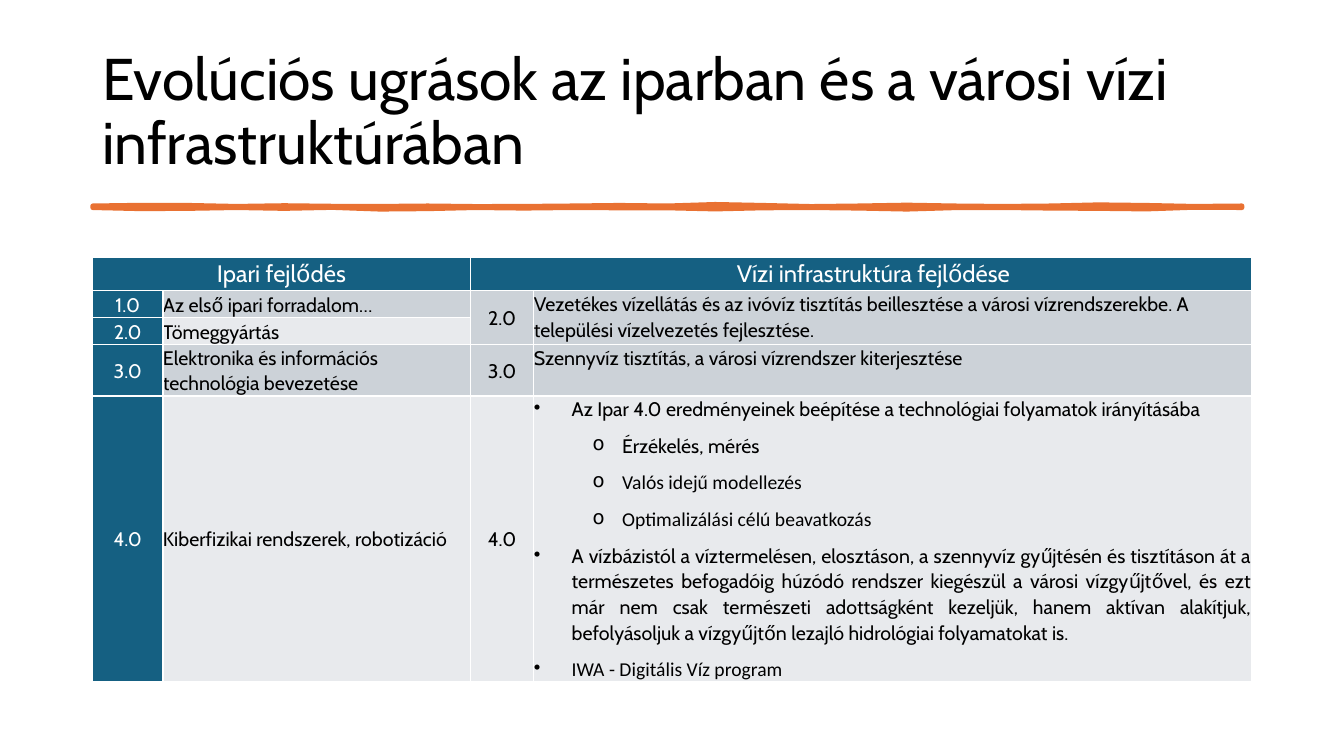
from dataclasses import dataclass

from lxml.etree import SubElement
from pptx import Presentation
from pptx.dml.color import RGBColor
from pptx.enum.text import MSO_ANCHOR, PP_ALIGN
from pptx.oxml.ns import qn
from pptx.util import Pt


@dataclass(frozen=True)
class Theme:
    heading_font: str = "Cabin"
    body_font: str = "Calibri"
    title_size: float = 42
    header_size: float = 17
    body_size: float = 14
    black: str = "000000"
    white: str = "FFFFFF"
    orange: str = "E97132"
    blue: str = "156082"
    dark_band: str = "CCD2D8"
    light_band: str = "E8EAED"


@dataclass
class Line:
    """One paragraph of a table cell."""
    text: str
    align: PP_ALIGN = PP_ALIGN.LEFT
    bullet: str = ""
    margin: float = 0
    indent: float = 0
    font: str = Theme.heading_font


class SlideBuilder:
    def __init__(self, page, theme):
        self.page = page
        self.theme = theme

    def style_runs(self, paragraph, font, size, color):
        for span in paragraph.runs:
            span.font.name = font
            span.font.size = Pt(size)
            span.font.color.rgb = RGBColor.from_string(color)

    def title(self, text, left, top, width, height):
        box = self.page.shapes.add_textbox(Pt(left), Pt(top), Pt(width), Pt(height))
        frame = box.text_frame
        frame.word_wrap = True
        frame.vertical_anchor = MSO_ANCHOR.MIDDLE
        frame.text = text
        para = frame.paragraphs[0]
        para.line_spacing = 0.9
        self.style_runs(para, self.theme.heading_font, self.theme.title_size, self.theme.black)

    def brush_stroke(self, left, top, width, upper, lower):
        """Draw a hand-drawn rule from evenly spaced offsets of its two edges."""
        step = width / (len(upper) - 1)
        upper_edge = [(left + i * step, top + y) for i, y in enumerate(upper)]
        lower_edge = [(left + i * step, top + y) for i, y in enumerate(lower)]
        outline = [(Pt(x), Pt(y)) for x, y in upper_edge + lower_edge[::-1]]
        builder = self.page.shapes.build_freeform(*outline[0])
        builder.add_line_segments(outline[1:], close=True)
        stroke = builder.convert_to_shape()
        stroke.shadow.inherit = False
        color = RGBColor.from_string(self.theme.orange)
        stroke.fill.solid()
        stroke.fill.fore_color.rgb = color
        stroke.line.color.rgb = color
        stroke.line.width = Pt(3.25)

    def table(self, left, top, columns, rows):
        frame = self.page.shapes.add_table(len(rows), len(columns), Pt(left), Pt(top),
                                           Pt(sum(columns)), Pt(sum(rows)))
        table = frame.table
        table.first_row = table.horz_banding = False
        for column, width in zip(table.columns, columns):
            column.width = Pt(width)
        for row, height in zip(table.rows, rows):
            row.height = Pt(height)
        return table

    def cell(self, cell, lines, fill, color, size, anchor):
        cell.margin_left = cell.margin_right = cell.margin_top = cell.margin_bottom = 0
        cell.vertical_anchor = anchor
        self.cell_borders(cell)
        cell.fill.solid()
        cell.fill.fore_color.rgb = RGBColor.from_string(fill)
        frame = cell.text_frame
        frame.text = "\n".join(line.text for line in lines)
        for para, line in zip(frame.paragraphs, lines):
            para.alignment = line.align
            para.line_spacing = 1.07
            para.space_after = Pt(8)
            properties = para._p.get_or_add_pPr()
            properties.set("marL", str(Pt(line.margin)))
            properties.set("indent", str(Pt(line.indent)))
            if line.bullet:
                SubElement(properties, qn("a:buChar")).set("char", line.bullet)
            para.font.size = Pt(size)
            self.style_runs(para, line.font, size, color)
            # The paragraph end sets the size of the bullet
            SubElement(para._p, qn("a:endParaRPr"), sz=str(size * 100))

    def cell_borders(self, cell):
        properties = cell._tc.get_or_add_tcPr()
        for side in ("a:lnL", "a:lnR", "a:lnT", "a:lnB"):
            border = SubElement(properties, qn(side), w=str(Pt(1)))
            fill = SubElement(border, qn("a:solidFill"))
            SubElement(fill, qn("a:srgbClr"), val=self.theme.white)


def centred(text, margin=0):
    return [Line(text, PP_ALIGN.CENTER, margin=margin)]


def bullet(text, align=PP_ALIGN.LEFT, font=Theme.heading_font):
    return Line(text, align, "•", 27, -27, font)


def sub_bullet(text, font=Theme.heading_font):
    return Line(text, PP_ALIGN.LEFT, "o", 63, -21, font)


def main():
    theme = Theme()
    deck = Presentation()
    deck.slide_width, deck.slide_height = Pt(960), Pt(540)
    builder = SlideBuilder(deck.slides.add_slide(deck.slide_layouts[6]), theme)

    # Title and the brush stroke under it
    builder.title("Evolúciós ugrások az iparban és a városi vízi infrastruktúrában",
                  66, 28.75, 828, 104.4)
    upper = [0, -0.5, -0.4, 0.3, -0.2, 0.2, 0.3, 0, 0.4, 0.3, 0, -0.4, 0,
             -1.1, -0.4, 0.4, 0, -0.6, 0, 0.3, 0, -0.8, -0.4, 0.3, 0]
    lower = [1.4, 2.2, 2, 1.4, 2, 1.3, 2.5, 2.2, 1.4, 1.8, 1.4, 1.6, 1.6,
             2.4, 1.6, 1.4, 1.8, 2.5, 1.5, 1.4, 1.8, 2, 2.4, 1.2, 1.4]
    builder.brush_stroke(66.2, 147, 821, upper, lower)

    # Table grid with its merged cells
    table = builder.table(66.2, 184, [50.2, 219.6, 45.4, 512.6],
                          [23.8, 19.2, 19.2, 36.7, 204])
    for first, last in [((0, 0), (0, 1)), ((0, 2), (0, 3)), ((1, 2), (2, 2)), ((1, 3), (2, 3))]:
        table.cell(*first).merge(table.cell(*last))

    # Header row
    headers = {0: centred("Ipari fejlődés"),
               2: centred("Vízi infrastruktúra fejlődése", margin=18)}
    for column, lines in headers.items():
        builder.cell(table.cell(0, column), lines, theme.blue, theme.white,
                     theme.header_size, MSO_ANCHOR.TOP)

    # Body rows: band colour, industry stage, industry text, water stage, water text
    justify = PP_ALIGN.JUSTIFY
    body = [
        (theme.dark_band, "1.0", "Az első ipari forradalom…", "2.0",
         [Line("Vezetékes vízellátás és az ivóvíz tisztítás beillesztése a városi "
               "vízrendszerekbe. A települési vízelvezetés fejlesztése.")]),
        (theme.light_band, "2.0", "Tömeggyártás", None, None),
        (theme.dark_band, "3.0", "Elektronika és információs technológia bevezetése", "3.0",
         [Line("Szennyvíz tisztítás, a városi vízrendszer kiterjesztése", justify)]),
        (theme.light_band, "4.0", "Kiberfizikai rendszerek, robotizáció", "4.0", [
            bullet("Az Ipar 4.0 eredményeinek beépítése a technológiai folyamatok irányításába"),
            sub_bullet("Érzékelés, mérés"),
            sub_bullet("Valós idejű modellezés", theme.body_font),
            sub_bullet("Optimalizálási célú beavatkozás", theme.body_font),
            bullet("A vízbázistól a víztermelésen, elosztáson, a szennyvíz gyűjtésén és "
                   "tisztításon át a természetes befogadóig húzódó rendszer kiegészül a városi "
                   "vízgyűjtővel, és ezt már nem csak természeti adottságként kezeljük, hanem "
                   "aktívan alakítjuk, befolyásoljuk a vízgyűjtőn lezajló hidrológiai "
                   "folyamatokat is.", justify),
            bullet("IWA - Digitális Víz program", justify, theme.body_font),
        ]),
    ]
    for row, (band, stage, industry, water_stage, water) in enumerate(body, start=1):
        entries = [(centred(stage), theme.blue, theme.white, MSO_ANCHOR.MIDDLE),
                   ([Line(industry)], band, theme.black, MSO_ANCHOR.MIDDLE)]
        if water:
            anchor = MSO_ANCHOR.MIDDLE if len(water) > 1 else MSO_ANCHOR.TOP
            entries += [(centred(water_stage), band, theme.black, MSO_ANCHOR.MIDDLE),
                        (water, band, theme.black, anchor)]
        for column, (lines, fill, color, anchor) in enumerate(entries):
            builder.cell(table.cell(row, column), lines, fill, color, theme.body_size, anchor)

    deck.save("out.pptx")


if __name__ == "__main__":
    main()
